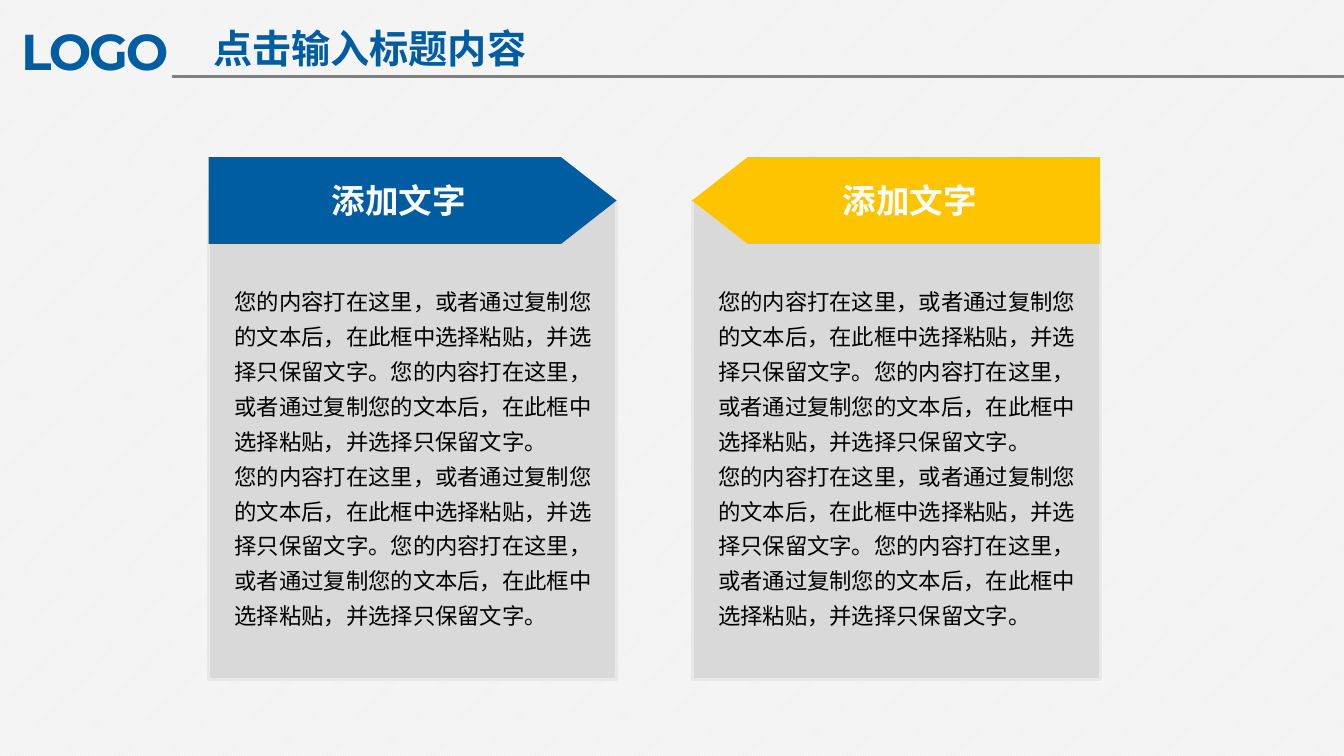
from dataclasses import dataclass

from lxml.etree import SubElement
from pptx import Presentation
from pptx.dml.color import RGBColor
from pptx.enum.dml import MSO_PATTERN
from pptx.enum.shapes import MSO_CONNECTOR, MSO_SHAPE
from pptx.enum.text import MSO_ANCHOR, MSO_AUTO_SIZE, PP_ALIGN
from pptx.oxml.ns import qn
from pptx.util import Inches, Pt


@dataclass(frozen=True)
class Theme:
    blue: str = "005DA2"
    yellow: str = "FFC400"
    white: str = "FFFFFF"
    black: str = "000000"
    backdrop: str = "F2F2F2"
    panel: str = "D9D9D9"
    panel_edge: str = "E8E8E6"
    rule: str = "808080"
    text_font: str = "Noto Sans CJK SC"
    logo_font: str = "Montserrat"
    logo_size: int = 36
    title_size: int = 28
    heading_size: int = 24
    body_size: int = 16
    line_width: int = 2


class SlideBuilder:
    def __init__(self, page, theme):
        self.page = page
        self.theme = theme

    def background(self):
        fill = self.page.background.fill
        fill.patterned()
        fill.pattern = MSO_PATTERN.LIGHT_UPWARD_DIAGONAL
        fill.fore_color.rgb = RGBColor.from_string(self.theme.white)
        fill.back_color.rgb = RGBColor.from_string(self.theme.backdrop)

    def style(self, paragraph, size, color, bold=False, name=None, align=PP_ALIGN.LEFT):
        paragraph.alignment = align
        font = paragraph.font
        font.size = Pt(size)
        font.bold = bold
        font.color.rgb = RGBColor.from_string(color)
        font.name = name or self.theme.text_font
        properties = paragraph._p.pPr.find(qn("a:defRPr"))
        SubElement(properties, qn("a:ea"), typeface=font.name)
        return properties

    def title(self, text, left, top, width, height):
        box = self.page.shapes.title
        box.left, box.top, box.width, box.height = map(Inches, (left, top, width, height))
        frame = box.text_frame
        frame.text = text
        frame.word_wrap = True
        frame.auto_size = MSO_AUTO_SIZE.SHAPE_TO_FIT_TEXT
        frame.vertical_anchor = MSO_ANCHOR.TOP
        self.style(frame.paragraphs[0], self.theme.title_size, self.theme.blue,
                   bold=True, align=PP_ALIGN.CENTER)

    def text_frame(self, text, left, top, width, height):
        box = self.page.shapes.add_textbox(*map(Inches, (left, top, width, height)))
        frame = box.text_frame
        frame.text = text
        frame.word_wrap = True
        frame.auto_size = MSO_AUTO_SIZE.SHAPE_TO_FIT_TEXT
        return frame

    def logo_label(self, text, left, top, width, height):
        frame = self.text_frame(text, left, top, width, height)
        frame.margin_left = frame.margin_right = Inches(0.13)
        frame.margin_top = frame.margin_bottom = Inches(0.07)
        properties = self.style(frame.paragraphs[0], self.theme.logo_size, self.theme.blue,
                                bold=True, name=self.theme.logo_font)
        properties.set("spc", "-150")

    def body(self, text, left, top, width, height):
        frame = self.text_frame(text, left, top, width, height)
        for paragraph in frame.paragraphs:
            paragraph.line_spacing = 1.3
            self.style(paragraph, self.theme.body_size, self.theme.black)

    def rule(self, left, right, top):
        line = self.page.shapes.add_connector(
            MSO_CONNECTOR.STRAIGHT, Inches(left), Inches(top), Inches(right), Inches(top))
        line.line.color.rgb = RGBColor.from_string(self.theme.rule)
        line.line.width = Pt(self.theme.line_width)
        SubElement(line._element.spPr, qn("a:effectLst"))

    def shape(self, kind, fill, left, top, width, height, edge=None):
        shape = self.page.shapes.add_shape(kind, *map(Inches, (left, top, width, height)))
        shape.shadow.inherit = False
        shape.fill.solid()
        shape.fill.fore_color.rgb = RGBColor.from_string(fill)
        if edge:
            shape.line.color.rgb = RGBColor.from_string(edge)
            shape.line.width = Pt(self.theme.line_width)
        else:
            shape.line.fill.background()
        return shape

    def banner(self, text, fill, left, top, width, height, flipped):
        banner = self.shape(MSO_SHAPE.PENTAGON, fill, left, top, width, height)
        banner.adjustments[0] = 0.64
        if flipped:
            banner._element.spPr.xfrm.set("flipH", "1")
        frame = banner.text_frame
        frame.text = text
        frame.word_wrap = False
        frame.vertical_anchor = MSO_ANCHOR.MIDDLE
        self.style(frame.paragraphs[0], self.theme.heading_size, self.theme.white,
                   bold=True, align=PP_ALIGN.CENTER)

    def card(self, heading, text, color, left, flipped):
        width = 4.05
        self.shape(MSO_SHAPE.RECTANGLE, self.theme.panel, left, 1.99, width, 4.75,
                   edge=self.theme.panel_edge)
        self.banner(heading, color, left, 1.56, width, 0.86, flipped)
        self.body(text, left + 0.16, 2.73, width - 0.16, 3.6)


def main():
    deck = Presentation()
    deck.slide_width = Inches(13.34)
    deck.slide_height = Inches(7.5)
    theme = Theme()
    builder = SlideBuilder(deck.slides.add_slide(deck.slide_layouts[5]), theme)

    builder.background()
    builder.logo_label("LOGO", 0.08, 0.13, 1.86, 0.74)
    builder.rule(1.71, 13.34, 0.76)
    builder.title("点击输入标题内容", 1.87, 0.19, 3.6, 0.57)

    sentence = "您的内容打在这里，或者通过复制您的文本后，在此框中选择粘贴，并选择只保留文字。"
    text = "\n".join([sentence * 2] * 2)
    for index, color in enumerate((theme.blue, theme.yellow)):
        builder.card("添加文字", text, color, 2.07 + 4.8 * index, flipped=index == 1)

    deck.save("out.pptx")


if __name__ == "__main__":
    main()
